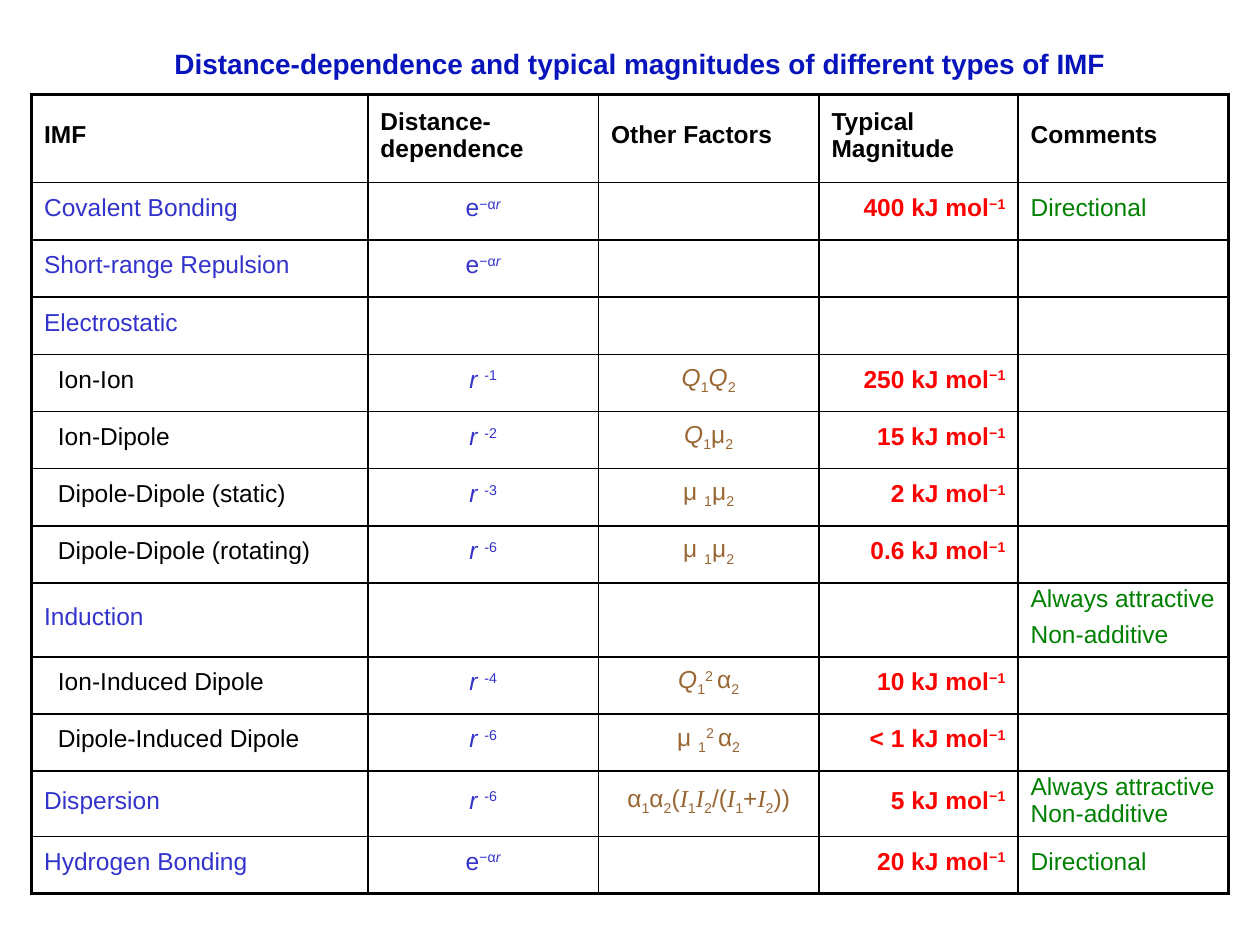
from pptx import Presentation
from pptx.dml.color import RGBColor
from pptx.enum.text import MSO_ANCHOR, PP_ALIGN
from pptx.oxml.ns import qn
from pptx.util import Inches, Pt
from lxml import etree

LEFT, CENTER, RIGHT = PP_ALIGN.LEFT, PP_ALIGN.CENTER, PP_ALIGN.RIGHT
MIDDLE = MSO_ANCHOR.MIDDLE

COLORS = {
    "title": "0714BB", "black": "000000", "group": "3333CC",
    "factor": "996633", "magnitude": "FF0000", "comment": "008000",
}

# Content: rich text is a list of (text, style) pairs, where the style letters
# are i italic, t Times italic, ^ superscript, _ subscript
TITLE = "Distance-dependence and typical magnitudes of different types of IMF"
HEADERS = ["IMF", "Distance-dependence", "Other Factors", "Typical Magnitude", "Comments"]

EXPONENTIAL = [("e", ""), ("−α", "^"), ("r", "^i")]
SUB_1, SUB_2 = ("1", "_"), ("2", "_")
CHARGE, DIPOLE, ALPHA = ("Q", "i"), ("μ", ""), ("α", "")
DIPOLE_FIRST, SQUARED, IONIZATION = ("μ ", ""), ("2 ", "^"), ("I", "t")
DIPOLE_PAIR = [DIPOLE_FIRST, SUB_1, DIPOLE, SUB_2]
LONDON = [ALPHA, SUB_1, ALPHA, SUB_2, ("(", ""), IONIZATION, SUB_1, IONIZATION, SUB_2,
          ("/(", ""), IONIZATION, SUB_1, ("+", ""), IONIZATION, SUB_2, ("))", "")]


def power(exponent):
    return [("r ", "i"), (str(exponent), "^")]


# force, is a subtype, distance-dependence, other factors, kJ per mole, comments
FORCES = [
    ("Covalent Bonding", False, EXPONENTIAL, [], "400", ["Directional"]),
    ("Short-range Repulsion", False, EXPONENTIAL, [], "", []),
    ("Electrostatic", False, [], [], "", []),
    ("Ion-Ion", True, power(-1), [CHARGE, SUB_1, CHARGE, SUB_2], "250", []),
    ("Ion-Dipole", True, power(-2), [CHARGE, SUB_1, DIPOLE, SUB_2], "15", []),
    ("Dipole-Dipole (static)", True, power(-3), DIPOLE_PAIR, "2", []),
    ("Dipole-Dipole (rotating)", True, power(-6), DIPOLE_PAIR, "0.6", []),
    ("Induction", False, [], [], "", ["Always attractive", "Non-additive"]),
    ("Ion-Induced Dipole", True, power(-4), [CHARGE, SUB_1, SQUARED, ALPHA, SUB_2], "10", []),
    ("Dipole-Induced Dipole", True, power(-6),
     [DIPOLE_FIRST, SUB_1, SQUARED, ALPHA, SUB_2], "< 1", []),
    ("Dispersion", False, power(-6), LONDON, "5", ["Always attractive Non-additive"]),
    ("Hydrogen Bonding", False, EXPONENTIAL, [], "20", ["Directional"]),
]

# Layout in inches; rows without a height of their own share the rest equally
TABLE_LEFT, TABLE_TOP, TABLE_WIDTH, TABLE_HEIGHT = 0.25, 0.75, 9.5, 6.29
COLUMN_WIDTHS = [2.67, 1.83, 1.75, 1.58, 1.67]
HEADER_HEIGHT = 0.7
TALL_ROWS = {"Induction": 0.56, "Dispersion": 0.49}
ROW_HEIGHT = (TABLE_HEIGHT - HEADER_HEIGHT - sum(TALL_ROWS.values())) / (
    len(FORCES) - len(TALL_ROWS))
INNER_LINE, OUTER_LINE = 1, 2.25
TEXT_SIZE, TITLE_SIZE = 14, 16


def write(paragraph, pieces, color, align=LEFT, bold=False, size=TEXT_SIZE):
    paragraph.alignment = align
    for text, style in pieces:
        run = paragraph.add_run()
        run.text = text
        run.font.name = "Times New Roman" if "t" in style else "Arial"
        run.font.size = Pt(size)
        run.font.bold = bold
        run.font.italic = "i" in style or "t" in style
        run.font.color.rgb = RGBColor.from_string(COLORS[color])
        if "^" in style or "_" in style:
            baseline = "30000" if "^" in style else "-25000"
            run._r.get_or_add_rPr().set("baseline", baseline)


def fill_cell(cell, paragraphs, color, align=LEFT, bold=False):
    for index, pieces in enumerate(paragraphs):
        frame = cell.text_frame
        paragraph = frame.add_paragraph() if index else frame.paragraphs[0]
        paragraph.space_before = Pt(TEXT_SIZE * 0.25)
        paragraph.space_after = Pt(TEXT_SIZE * 0.1)
        write(paragraph, pieces, color, align, bold)


def set_borders(cell, widths):
    properties = cell._tc.get_or_add_tcPr()
    for side, width in widths.items():
        line = etree.SubElement(properties, qn(f"a:ln{side}"), w=str(Pt(width)))
        solid = etree.SubElement(line, qn("a:solidFill"))
        etree.SubElement(solid, qn("a:srgbClr"), val=COLORS["black"])


prs = Presentation()
prs.slide_width, prs.slide_height = Inches(10), Inches(7.5)
slide = prs.slides.add_slide(prs.slide_layouts[6])

# Title
heading = slide.shapes.add_textbox(Inches(0.83), Inches(0.25), Inches(8.5), Inches(0.5)).text_frame
heading.word_wrap = True
heading.vertical_anchor = MIDDLE
write(heading.paragraphs[0], [(TITLE, "")], "title", CENTER, True, TITLE_SIZE)

# Table grid
row_count, column_count = len(FORCES) + 1, len(HEADERS)
table = slide.shapes.add_table(
    row_count, column_count, Inches(TABLE_LEFT), Inches(TABLE_TOP),
    Inches(TABLE_WIDTH), Inches(TABLE_HEIGHT)).table
table.first_row = table.horz_banding = False
for column, width in zip(table.columns, COLUMN_WIDTHS):
    column.width = Inches(width)
heights = [HEADER_HEIGHT] + [TALL_ROWS.get(force[0], ROW_HEIGHT) for force in FORCES]
for row, height in zip(table.rows, heights):
    row.height = Inches(height)

# Cell margins, borders and fill
for r in range(row_count):
    for c in range(column_count):
        cell = table.cell(r, c)
        cell.vertical_anchor = MIDDLE
        cell.margin_left = cell.margin_right = Inches(0.1)
        cell.margin_top, cell.margin_bottom = 0, Inches(0.05)
        edges = {"L": c == 0, "R": c == column_count - 1, "T": r == 0, "B": r == row_count - 1}
        set_borders(cell, {side: OUTER_LINE if outer else INNER_LINE
                           for side, outer in edges.items()})
        cell.fill.background()

# Header row
for c, header in enumerate(HEADERS):
    fill_cell(table.cell(0, c), [[(header, "")]], "black", bold=True)

# One row per force
for r, (name, is_subtype, distance, factors, energy, comments) in enumerate(FORCES, start=1):
    force, dependence, other, magnitude, comment = (table.cell(r, c) for c in range(column_count))
    if is_subtype:
        force.margin_left = Inches(0.21)
    fill_cell(force, [[(name, "")]], "black" if is_subtype else "group")
    fill_cell(dependence, [distance], "group", CENTER)
    fill_cell(other, [factors], "factor", CENTER)
    if energy:
        fill_cell(magnitude, [[(f"{energy} kJ mol", ""), ("−1", "^")]], "magnitude", RIGHT, True)
    fill_cell(comment, [[(text, "")] for text in comments], "comment")

prs.save("out.pptx")
